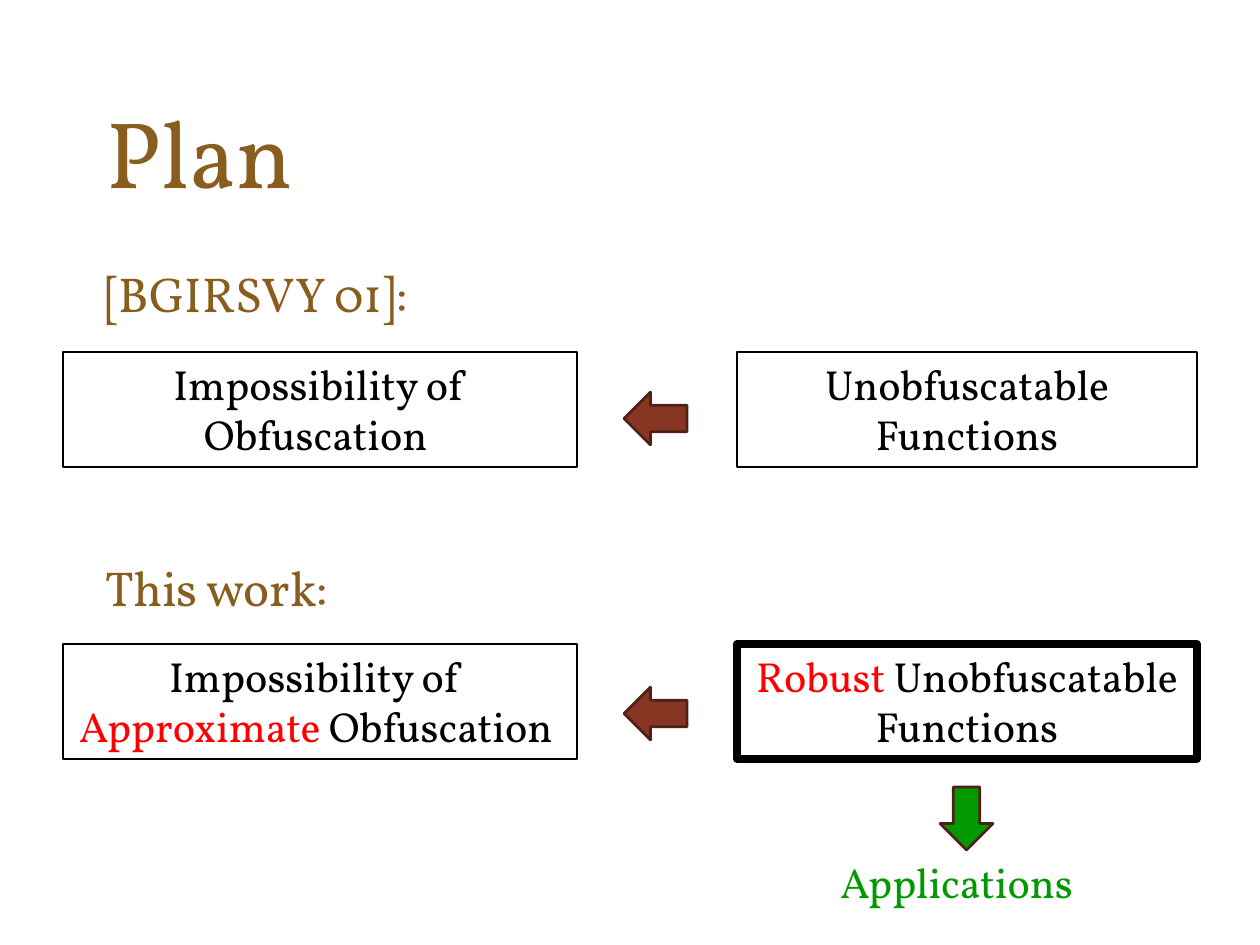
from pptx import Presentation
from pptx.dml.color import RGBColor as Rgb
from pptx.enum.shapes import MSO_SHAPE as Kind
from pptx.enum.text import MSO_ANCHOR as Anchor, MSO_AUTO_SIZE as Fit, PP_ALIGN as Align
from pptx.util import Pt

PX = 914400 / 126
FONT = "Vollkorn"
BROWN = Rgb(0x89, 0x5D, 0x1D)
BLACK = Rgb(0, 0, 0)
RED = Rgb(0xFF, 0, 0)
GREEN = Rgb(0, 0x99, 0)
RUST = Rgb(0x87, 0x36, 0x24)
DARK = Rgb(0x4F, 0x20, 0x15)

LEFT = (63, 514)
RIGHT = (737, 460)
ROWS = (352, 644)


def emu(*nums):
    return [round(n * PX) for n in nums]


def write(shape, lines, size, align=Align.LEFT, **form):
    """Fill a shape with lines, each a list of (text, colour) runs."""
    frame = shape.text_frame
    for key, val in {"word_wrap": True, **form}.items():
        setattr(frame, key, val)
    for i, line in enumerate(lines):
        para = frame.add_paragraph() if i else frame.paragraphs[0]
        para.alignment = align
        for text, color in line:
            run = para.add_run()
            run.text = text
            for key, val in {"name": FONT, "size": Pt(size)}.items():
                setattr(run.font, key, val)
            run.font.color.rgb = color


def title(slide, text):
    shape = slide.shapes.title
    spot = zip(("left", "top", "width", "height"), emu(94, 78, 1068, 145))
    for key, val in spot:
        setattr(shape, key, val)
    write(shape, [[(text, BROWN)]], 54, vertical_anchor=Anchor.MIDDLE)


def label(slide, box, text, size, color):
    shape = slide.shapes.add_textbox(*emu(*box))
    write(shape, [[(text, color)]], size, auto_size=Fit.SHAPE_TO_FIT_TEXT)


def outline(shape, color, width):
    shape.shadow.inherit = False
    shape.line.color.rgb = color
    shape.line.width = Pt(width)


def claim(slide, col, top, lines, width=0.75):
    """Add a framed statement in one column."""
    left, wide = col
    shape = slide.shapes.add_shape(Kind.RECTANGLE, *emu(left, top, wide, 115))
    shape.fill.background()
    outline(shape, BLACK, width)
    write(shape, lines, 24, Align.CENTER, vertical_anchor=Anchor.TOP,
          auto_size=Fit.SHAPE_TO_FIT_TEXT)


def arrow(slide, left, top, turn, color):
    shape = slide.shapes.add_shape(Kind.RIGHT_ARROW, *emu(left, top, 63, 53))
    shape.rotation = turn
    shape.fill.solid()
    shape.fill.fore_color.rgb = color
    outline(shape, DARK, 1.5)


def main():
    deck = Presentation()
    deck.slide_width, deck.slide_height = emu(1260, 945)
    slide = deck.slides.add_slide(deck.slide_layouts[5])

    title(slide, "Plan")
    label(slide, (93, 257, 411, 72), "[BGIRSVY 01]:", 28, BROWN)
    label(slide, (93, 551, 338, 72), "This work:", 28, BROWN)

    old, new = ROWS
    claim(slide, LEFT, old, [[("Impossibility of Obfuscation ", BLACK)]])
    claim(slide, LEFT, new, [
        [("Impossibility of ", BLACK)],
        [("Approximate", RED), (" Obfuscation ", BLACK)],
    ])
    claim(slide, RIGHT, old, [[("Unobfuscatable Functions", BLACK)]])
    claim(slide, RIGHT, new, [
        [("Robust ", RED), ("Unobfuscatable Functions", BLACK)],
    ], 4.5)

    for top in (392, 687):
        arrow(slide, 624, top, 180, RUST)
    arrow(slide, 935, 792, 90, GREEN)
    label(slide, (828, 850, 278, 63), "Applications", 24, GREEN)
    deck.save("out.pptx")


if __name__ == "__main__":
    main()
